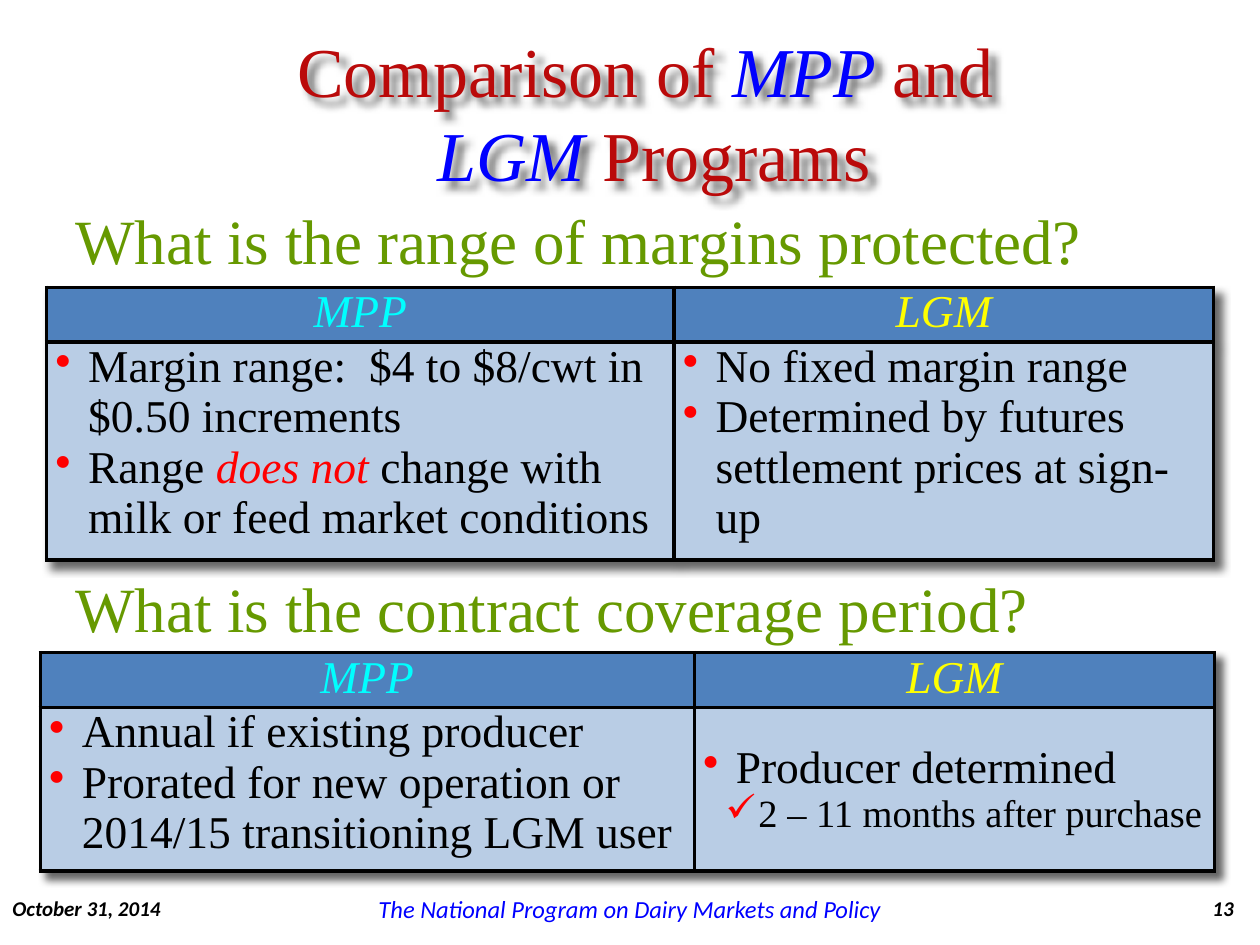
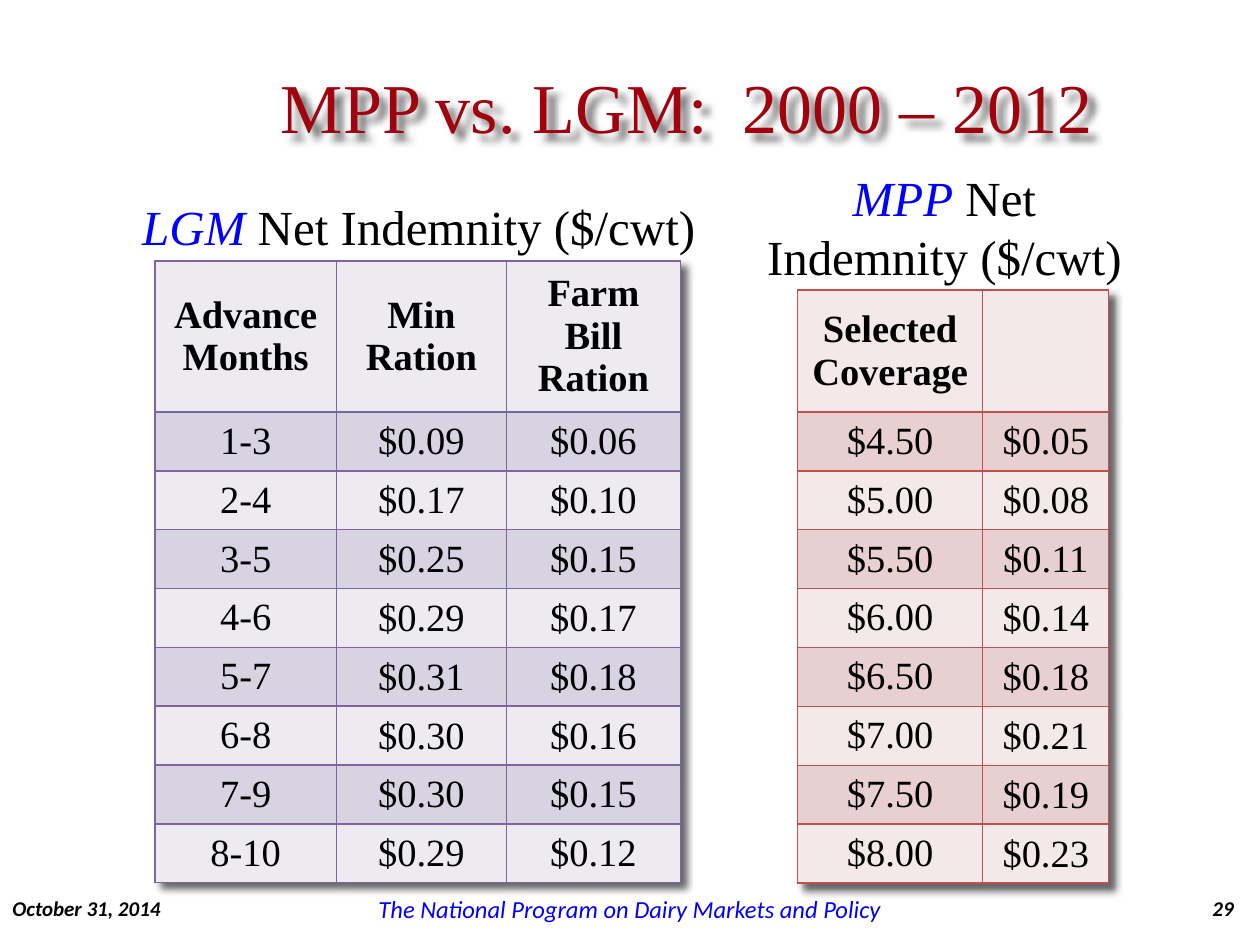
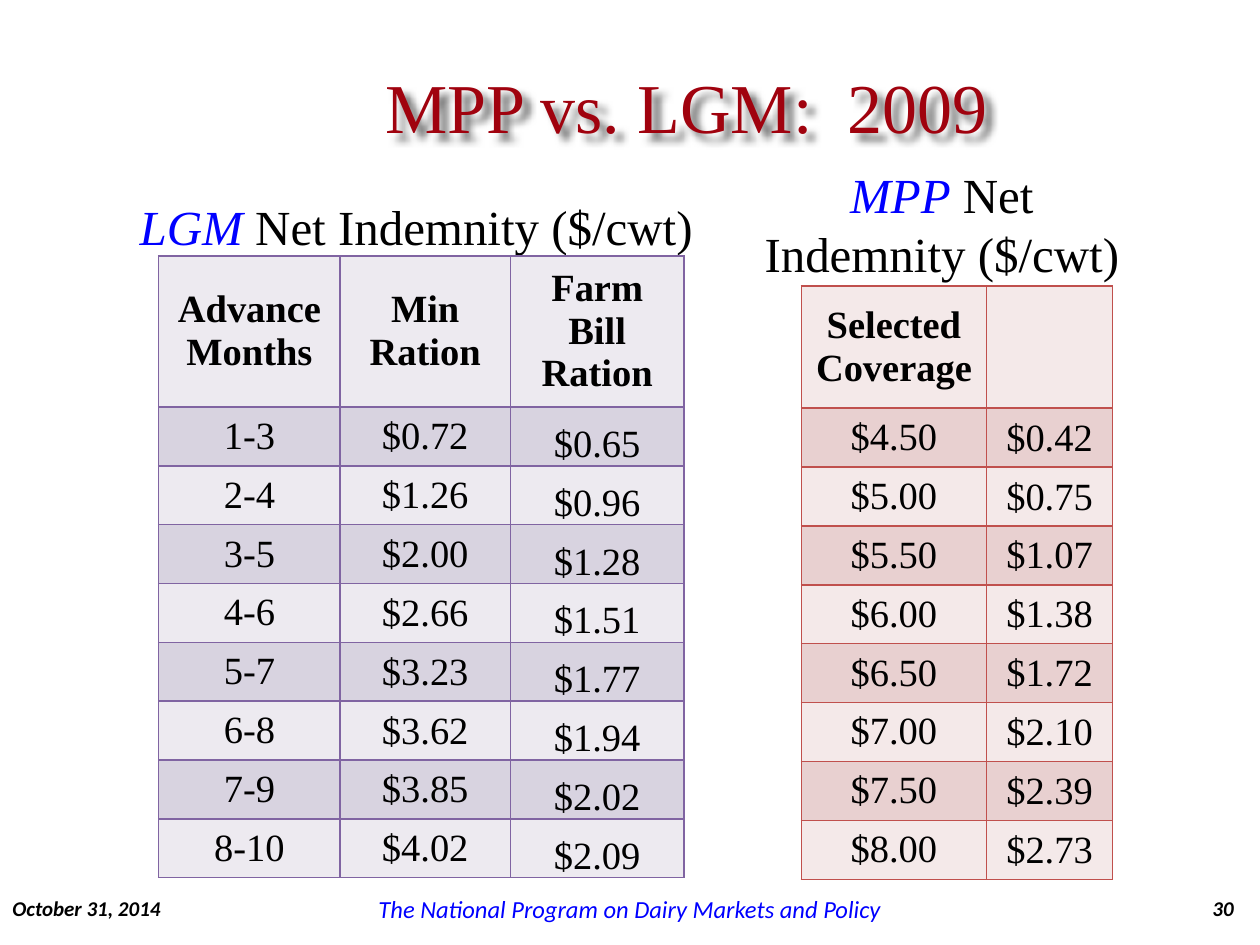
from dataclasses import dataclass, replace

from lxml import etree
from pptx import Presentation
from pptx.dml.color import RGBColor
from pptx.enum.text import MSO_ANCHOR, PP_ALIGN
from pptx.oxml.ns import qn
from pptx.util import Inches, Pt

LEFT, CENTER, RIGHT = PP_ALIGN.LEFT, PP_ALIGN.CENTER, PP_ALIGN.RIGHT
TOP, MIDDLE, BOTTOM = MSO_ANCHOR.TOP, MSO_ANCHOR.MIDDLE, MSO_ANCHOR.BOTTOM

BLACK = RGBColor(0x00, 0x00, 0x00)
RED = RGBColor(0xFF, 0x00, 0x00)
BLUE = RGBColor(0x00, 0x00, 0xFF)
CYAN = RGBColor(0x00, 0xFF, 0xFF)
YELLOW = RGBColor(0xFF, 0xFF, 0x00)
GREEN = RGBColor(0x66, 0x99, 0x00)
TITLE_RED = RGBColor(0xA0, 0x02, 0x0E)
BRIGHT_TITLE_RED = RGBColor(0xBA, 0x0A, 0x0A)
HEADER_BLUE = RGBColor(0x4F, 0x81, 0xBD)
BODY_BLUE = RGBColor(0xB9, 0xCD, 0xE5)
PURPLE = RGBColor(0x80, 0x64, 0xA2)
PURPLE_BANDS = (RGBColor(0xED, 0xEA, 0xF0), RGBColor(0xD8, 0xD3, 0xE0))
BRICK = RGBColor(0xC0, 0x50, 0x4D)
BRICK_BANDS = (RGBColor(0xF4, 0xE9, 0xE9), RGBColor(0xE8, 0xD0, 0xD0))


@dataclass(frozen=True)
class TextStyle:
    size: float
    color: RGBColor = BLACK
    font: str = "Times New Roman"
    bold: bool = False
    italic: bool = False


TITLE = TextStyle(40, TITLE_RED)
BRIGHT_TITLE = replace(TITLE, color=BRIGHT_TITLE_RED)
TITLE_PROGRAM = TextStyle(40, BLUE, italic=True)
QUESTION = TextStyle(36, GREEN)
CAPTION = TextStyle(28)
CAPTION_PROGRAM = TextStyle(28, BLUE, italic=True)
BODY = TextStyle(26)
EMPHASIS = TextStyle(26, RED, italic=True)
SUB_BODY = TextStyle(22)
DATA = TextStyle(22)
DATA_HEADER = TextStyle(22, bold=True)
FOOTER_EDGE = TextStyle(12, font="Calibri", bold=True, italic=True)
FOOTER_CENTER = TextStyle(14, BLUE, "Calibri", italic=True)

COMPARISON_INSETS = (0.07, 0, 0.07, 0)
LABEL_INSETS = (0.1, 0.05, 0.1, 0.05)
VALUE_INSETS = (0.01, 0.01, 0.01, 0)

LGM_HEADERS = [["Advance", "Months"], ["Min Ration"], ["Farm Bill Ration"]]
LGM_MONTHS = [f"{month}-{month + 2}" for month in range(1, 9)]
MPP_HEADERS = [["Selected", "Coverage"], []]
MPP_COVERAGE = [f"${4.5 + step / 2:.2f}" for step in range(8)]


@dataclass(frozen=True)
class DataTableStyle:
    line: RGBColor
    bands: tuple
    widths: tuple
    header_height: float
    height: float


LGM_STYLE = DataTableStyle(PURPLE, PURPLE_BANDS, (1.44, 1.35, 1.38), 1.12, 4.62)
MPP_STYLE = DataTableStyle(BRICK, BRICK_BANDS, (1.47, 1), 0.97, 4.71)


def add_element(parent, tag, **attributes):
    element = etree.SubElement(parent, qn(tag))
    for name, value in attributes.items():
        element.set(name, str(value))
    return element


def add_outer_shadow(effect_list):
    shadow = add_element(effect_list, "a:outerShdw", blurRad=Inches(0.06),
                         dist=Inches(0.07), dir=2700000, algn="tl", rotWithShape=0)
    color = add_element(shadow, "a:srgbClr", val=BLACK)
    add_element(color, "a:alpha", val=60000)


def set_bullet(paragraph, character, indent):
    properties = paragraph._p.get_or_add_pPr()
    properties.set("marL", str(Inches(indent)))
    properties.set("indent", str(Inches(-0.26)))
    color = add_element(properties, "a:buClr")
    add_element(color, "a:srgbClr", val=RED)
    add_element(properties, "a:buChar", char=character)


def write(frame, paragraphs, align=LEFT, bullets=()):
    """Fill a text frame; each paragraph is a list of (text, style) runs."""
    for index, runs in enumerate(paragraphs):
        paragraph = frame.add_paragraph() if index else frame.paragraphs[0]
        if bullets:
            set_bullet(paragraph, *bullets[index])
        paragraph.alignment = align
        for text, style in runs:
            run = paragraph.add_run()
            run.text = text
            run.font.name = style.font
            run.font.size = Pt(style.size)
            run.font.bold = style.bold
            run.font.italic = style.italic
            run.font.color.rgb = style.color


def style_cell(cell, fill, line, line_width, insets, anchor):
    properties = cell._tc.get_or_add_tcPr()
    for side in ("a:lnL", "a:lnR", "a:lnT", "a:lnB"):
        border = add_element(properties, side, w=Pt(line_width))
        solid = add_element(border, "a:solidFill")
        add_element(solid, "a:srgbClr", val=line)
    cell.fill.solid()
    cell.fill.fore_color.rgb = fill
    cell.margin_left, cell.margin_top, cell.margin_right, cell.margin_bottom = map(
        Inches, insets)
    cell.vertical_anchor = anchor


class Deck:
    """Holds the presentation, the current slide and its shared look."""

    def __init__(self):
        self.presentation = Presentation()
        self.presentation.slide_width = Inches(10)
        self.presentation.slide_height = Inches(7.5)
        self.slide = None

    def add_slide(self, number):
        self.slide = self.presentation.slides.add_slide(
            self.presentation.slide_layouts[6])
        footers = (
            (0, 1.61, "October 31, 2014", FOOTER_EDGE, LEFT),
            (2.88, 4.24, "The National Program on Dairy Markets and Policy",
             FOOTER_CENTER, CENTER),
            (9.11, 0.78, str(number), FOOTER_EDGE, RIGHT),
        )
        for left, width, text, style, align in footers:
            self.add_text(left, 7.09, width, 0.24, [[(text, style)]], align, MIDDLE)

    def add_text(self, left, top, width, height, paragraphs, align=LEFT,
                 anchor=TOP, wrap=True):
        shape = self.slide.shapes.add_textbox(
            Inches(left), Inches(top), Inches(width), Inches(height))
        shape.text_frame.word_wrap = wrap
        shape.text_frame.vertical_anchor = anchor
        write(shape.text_frame, paragraphs, align)
        return shape

    def add_title(self, left, top, paragraphs):
        shape = self.add_text(left, top, 8.1, 1.25, paragraphs, CENTER, MIDDLE)
        shape.shadow.inherit = False
        add_outer_shadow(shape.element.spPr.find(qn("a:effectLst")))

    def add_question(self, top, width, text):
        self.add_text(0.5, top, width, 0.71, [[(text, QUESTION)]], wrap=False)

    def add_captions(self, lgm_left, mpp_left, mpp_top):
        self.add_text(lgm_left, 1.51, 4.68, 0.57,
                      [[("LGM", CAPTION_PROGRAM), (" Net Indemnity ($/cwt)", CAPTION)]],
                      wrap=False)
        self.add_text(mpp_left, mpp_top, 3.05, 1.04,
                      [[("MPP", CAPTION_PROGRAM), (" Net", CAPTION)],
                       [("Indemnity ($/cwt)", CAPTION)]], CENTER, wrap=False)

    def add_table(self, left, top, widths, heights, shadow=True):
        frame = self.slide.shapes.add_table(
            len(heights), len(widths), Inches(left), Inches(top),
            Inches(sum(widths)), Inches(sum(heights)))
        table = frame.table
        table.first_row = table.horz_banding = False
        for column, width in zip(table.columns, widths):
            column.width = Inches(width)
        for row, height in zip(table.rows, heights):
            row.height = Inches(height)
        if shadow:
            effect_list = etree.Element(qn("a:effectLst"))
            add_outer_shadow(effect_list)
            table._tbl.tblPr.insert(0, effect_list)
        return table

    def add_comparison(self, left, top, widths, body_height, bodies):
        """Add an MPP/LGM table; each body is (anchor, paragraphs, bullets)."""
        table = self.add_table(left, top, widths, (0.4, body_height))
        programs = (("MPP", CYAN), ("LGM", YELLOW))
        for column, ((program, color), body) in enumerate(zip(programs, bodies)):
            anchor, paragraphs, bullets = body
            header, content = table.cell(0, column), table.cell(1, column)
            style_cell(header, HEADER_BLUE, BLACK, 2.25, COMPARISON_INSETS, TOP)
            write(header.text_frame,
                  [[(program, replace(BODY, color=color, italic=True))]], CENTER)
            style_cell(content, BODY_BLUE, BLACK, 2.25, COMPARISON_INSETS, anchor)
            write(content.text_frame, paragraphs, bullets=bullets)

    def add_data_table(self, left, top, style, headers, columns,
                       last_anchor=MIDDLE, shadow=True):
        count = len(columns[0])
        row_height = (style.height - style.header_height) / count
        heights = [style.header_height] + [row_height] * count
        table = self.add_table(left, top, style.widths, heights, shadow)
        for column, (header, values) in enumerate(zip(headers, columns)):
            cell = table.cell(0, column)
            style_cell(cell, style.bands[0], style.line, 1, LABEL_INSETS, MIDDLE)
            write(cell.text_frame, [[(line, DATA_HEADER)] for line in header], CENTER)
            insets = VALUE_INSETS if column else LABEL_INSETS
            anchor = last_anchor if column == len(columns) - 1 else MIDDLE
            for row, value in enumerate(values, 1):
                cell = table.cell(row, column)
                style_cell(cell, style.bands[row % 2], style.line, 1, insets, anchor)
                write(cell.text_frame, [[(value, DATA)]], CENTER)

    def save(self):
        self.presentation.save("out.pptx")


def build_program_comparison(deck):
    bullet, check = ("•", 0.26), ("✓", 0.44)
    deck.add_slide(13)
    deck.add_title(1.07, 0.26, [
        [("Comparison of ", BRIGHT_TITLE), ("MPP ", TITLE_PROGRAM), ("and", BRIGHT_TITLE)],
        [(" ", TITLE), ("LGM ", TITLE_PROGRAM), ("Programs", BRIGHT_TITLE)],
    ])
    deck.add_question(1.55, 8.4, "What is the range of margins protected?")
    deck.add_comparison(0.37, 2.28, (4.98, 4.28), 1.6, (
        (TOP, [
            [("Margin range:  $4 to $8/cwt in $0.50 increments", BODY)],
            [("Range ", BODY), ("does not ", EMPHASIS),
             ("change with milk or feed market conditions", BODY)],
        ], (bullet, bullet)),
        (TOP, [
            [("No fixed margin range", BODY)],
            [("Determined by futures settlement prices at sign-up", BODY)],
        ], (bullet, bullet)),
    ))
    deck.add_question(4.47, 7.85, "What is the contract coverage period?")
    deck.add_comparison(0.32, 5.18, (5.19, 4.13), 1.2, (
        (TOP, [
            [("Annual if existing producer", BODY)],
            [("Prorated for new operation or 2014/15 transitioning LGM user", BODY)],
        ], (bullet, bullet)),
        (MIDDLE, [
            [("Producer determined", BODY)],
            [("2 – 11 months after purchase", SUB_BODY)],
        ], (bullet, check)),
    ))


def build_indemnity_2000_2012(deck):
    deck.add_slide(29)
    deck.add_title(1.4, 0.21, [[("MPP vs. LGM:  2000 – 2012", TITLE)]])
    deck.add_captions(1.03, 5.97, 1.28)
    min_ration = ["$0.09", "$0.17", "$0.25", "$0.29", "$0.31", "$0.30", "$0.30", "$0.29"]
    farm_bill = ["$0.06", "$0.10", "$0.15", "$0.17", "$0.18", "$0.16", "$0.15", "$0.12"]
    mpp_net = ["$0.05", "$0.08", "$0.11", "$0.14", "$0.18", "$0.21", "$0.19", "$0.23"]
    deck.add_data_table(1.23, 2.07, LGM_STYLE, LGM_HEADERS,
                        (LGM_MONTHS, min_ration, farm_bill))
    deck.add_data_table(6.33, 2.3, MPP_STYLE, MPP_HEADERS, (MPP_COVERAGE, mpp_net))


def build_indemnity_2009(deck):
    deck.add_slide(30)
    deck.add_title(1.4, 0.21, [[("MPP vs. LGM:  2009", TITLE)]])
    deck.add_captions(1.01, 5.95, 1.26)
    min_ration = ["$0.72", "$1.26", "$2.00", "$2.66", "$3.23", "$3.62", "$3.85", "$4.02"]
    farm_bill = ["$0.65", "$0.96", "$1.28", "$1.51", "$1.77", "$1.94", "$2.02", "$2.09"]
    mpp_net = ["$0.42", "$0.75", "$1.07", "$1.38", "$1.72", "$2.10", "$2.39", "$2.73"]
    deck.add_data_table(1.26, 2.03, LGM_STYLE, LGM_HEADERS,
                        (LGM_MONTHS, min_ration, farm_bill), BOTTOM, shadow=False)
    deck.add_data_table(6.36, 2.27, MPP_STYLE, MPP_HEADERS,
                        (MPP_COVERAGE, mpp_net), shadow=False)


def main():
    deck = Deck()
    build_program_comparison(deck)
    build_indemnity_2000_2012(deck)
    build_indemnity_2009(deck)
    deck.save()


if __name__ == "__main__":
    main()
